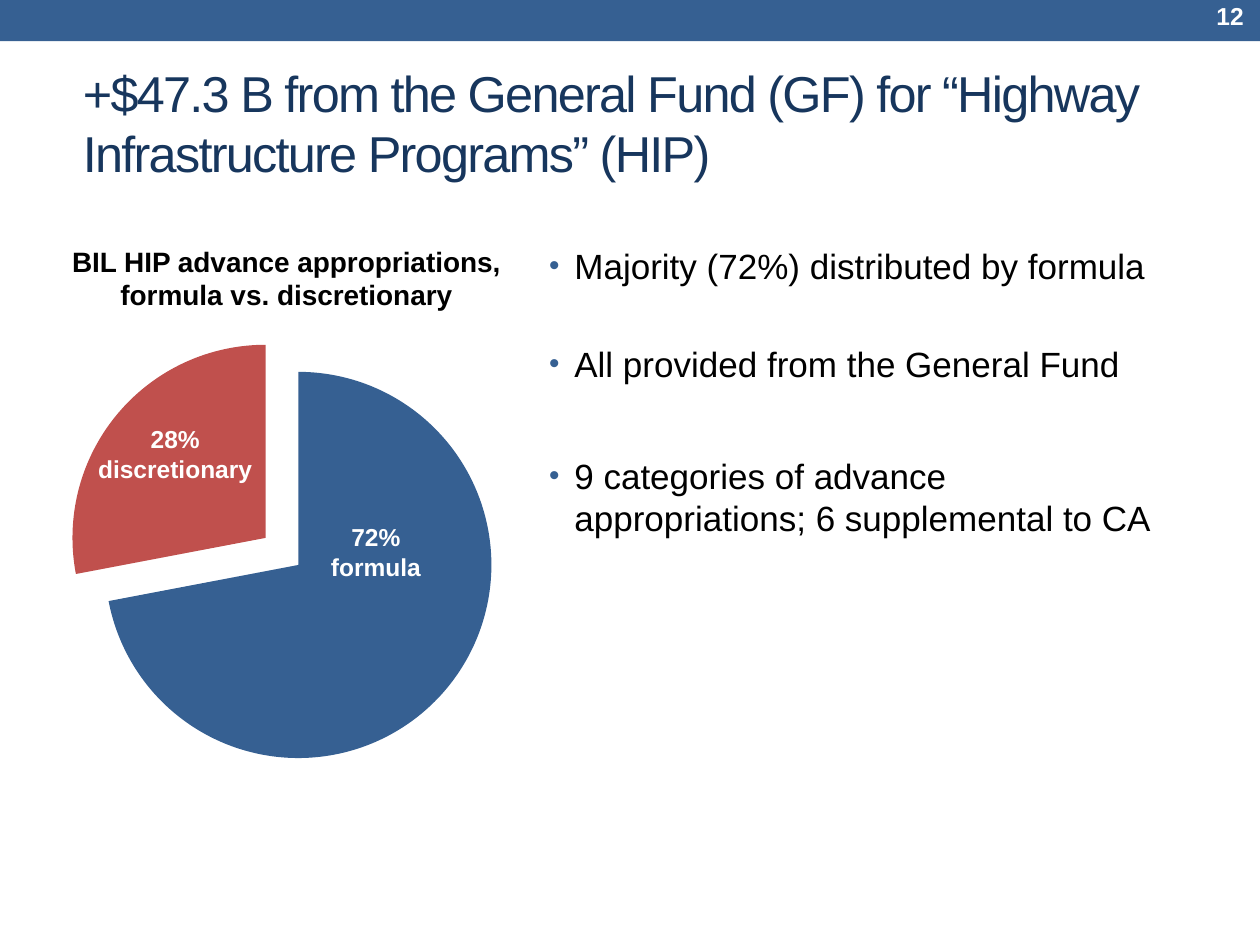
import pptx
import pptx.chart.data
import pptx.dml.color
import pptx.enum.chart
import pptx.enum.shapes
import pptx.enum.text
import pptx.oxml
import pptx.oxml.ns
import pptx.util

Pt = pptx.util.Pt
ALIGN = pptx.enum.text.PP_ALIGN
ANCHOR = pptx.enum.text.MSO_ANCHOR
BLUE, RED, NAVY, BLACK, WHITE = "366092", "C0504D", "17365D", "000000", "FFFFFF"


def color(value):
    """Return the RGB colour for a hex string."""
    return pptx.dml.color.RGBColor.from_string(value)


def apply_format(target, values):
    """Set each attribute of target from a dict."""
    for attribute, value in values.items():
        setattr(target, attribute, value)


def paint(fill, value):
    """Fill solidly with one colour."""
    fill.solid()
    fill.fore_color.rgb = color(value)


def add_text(slide, box, text, size, hue, bold=False, align=ALIGN.LEFT, anchor=ANCHOR.TOP):
    """Write wrapped text in a box and return its text frame."""
    frame = slide.shapes.add_textbox(*map(Pt, box)).text_frame
    apply_format(frame, {"word_wrap": True, "vertical_anchor": anchor, "text": text})
    for paragraph in frame.paragraphs:
        paragraph.alignment = align
        for run in paragraph.runs:
            apply_format(run.font, {"name": "Arial", "size": Pt(size), "bold": bold})
            run.font.color.rgb = color(hue)
    return frame


def add_header(slide, box, number):
    """Draw the top band with the slide number at its right end."""
    left, top, width, height = box
    band = slide.shapes.add_shape(pptx.enum.shapes.MSO_SHAPE.RECTANGLE, *map(Pt, box))
    band.shadow.inherit = False
    paint(band.fill, BLUE)
    band.line.fill.background()
    add_text(slide, (left + width - 86.4, top + 0.7, 84.2, 26), number, 14, WHITE,
             True, ALIGN.RIGHT, ANCHOR.MIDDLE)


def add_title(slide, box, text):
    """Write the slide title with tightened letter spacing."""
    frame = add_text(slide, box, text, 28.8, NAVY, anchor=ANCHOR.MIDDLE)
    for run in frame.paragraphs[0].runs:
        run.font._element.set("spc", "-100")


def add_bullets(slide, box, points):
    """List the points, given as (text, space before), with blue bullets."""
    frame = add_text(slide, box, "\n".join(text for text, _ in points), 20, BLACK)
    namespace = pptx.oxml.ns.nsdecls("a")
    bullet_parts = (
        f'<a:buClr {namespace}><a:srgbClr val="{BLUE}"/></a:buClr>',
        f'<a:buSzPct {namespace} val="85000"/>',
        f'<a:buFont {namespace} typeface="Arial"/>',
        f'<a:buChar {namespace} char="•"/>',
    )
    for paragraph, (_, gap) in zip(frame.paragraphs, points):
        paragraph.space_before = Pt(gap)
        properties = paragraph._p.get_or_add_pPr()
        properties.set("marL", str(Pt(14.4)))
        properties.set("indent", str(-Pt(14.4)))
        for part in bullet_parts:
            properties.append(pptx.oxml.parse_xml(part))


def add_pie(slide, box, shares):
    """Draw the pie of (name, value, colour, explosion) shares."""
    data = pptx.chart.data.CategoryChartData()
    data.categories = [name for name, _, _, _ in shares]
    data.add_series("Share", [value for _, value, _, _ in shares])
    chart = slide.shapes.add_chart(
        pptx.enum.chart.XL_CHART_TYPE.PIE, *map(Pt, box), data).chart
    apply_format(chart, {"has_title": False, "has_legend": False})
    apply_format(chart.font, {"name": "Arial", "size": Pt(10)})
    chart.font.color.rgb = color(BLACK)
    plot = chart.plots[0]
    plot.vary_by_categories = True
    namespace = pptx.oxml.ns.nsdecls("c")
    for index, (_, _, hue, explosion) in enumerate(shares):
        point = plot.series[0].points[index]
        paint(point.format.fill, hue)
        point.format.line.fill.background()
        if explosion:
            slice_xml = plot.series[0]._element.findall(pptx.oxml.ns.qn("c:dPt"))[index]
            slice_xml.find(pptx.oxml.ns.qn("c:spPr")).addprevious(
                pptx.oxml.parse_xml(f'<c:explosion {namespace} val="{explosion}"/>'))
    area = chart._chartSpace.chart.plotArea
    for layout in area.findall(pptx.oxml.ns.qn("c:layout")):
        area.remove(layout)
    settings = {"layoutTarget": "inner", "xMode": "edge", "yMode": "edge",
                "x": 0.13, "y": 0.1, "w": 0.79, "h": 0.79}
    entries = "".join(f'<c:{key} val="{value}"/>' for key, value in settings.items())
    area.insert(0, pptx.oxml.parse_xml(
        f"<c:layout {namespace}><c:manualLayout>{entries}</c:manualLayout></c:layout>"))


def add_share_panel(slide, box):
    """Place the heading, the pie and the two slice labels."""
    left, top, width, _ = box
    add_text(slide, (left + 3.4, top, width - 3.4, 52),
             "BIL HIP advance appropriations, formula vs. discretionary",
             16, BLACK, True, ALIGN.CENTER)
    add_pie(slide, (left, top + 46.8, 279.4, 283),
            [("Formula", 72, BLUE, 0), ("Discretionary", 28, RED, 22)])
    labels = [("28%\ndiscretionary", (16.6, 103, 119.5, 33)),
              ("72%\nformula", (136, 159, 110, 58))]
    for text, (across, down, label_width, label_height) in labels:
        add_text(slide, (left + across, top + down, label_width, label_height),
                 text, 14, WHITE, True, ALIGN.CENTER)


def main():
    """Build the slide and save it."""
    deck = pptx.Presentation()
    apply_format(deck, {"slide_width": Pt(720), "slide_height": Pt(540)})
    slide = deck.slides.add_slide(deck.slide_layouts[6])
    paint(slide.background.fill, WHITE)
    add_header(slide, (0, -5, 720, 28.5), "12")
    add_title(slide, (40.3, 31, 643.7, 77.8),
              "+$47.3 B from the General Fund (GF) for “Highway Infrastructure Programs” (HIP)")
    add_bullets(slide, (306.7, 136, 370, 361.4), [
        ("Majority (72%) distributed by formula", 0),
        ("All provided from the General Fund", 32),
        ("9 categories of advance appropriations; 6 supplemental to CA", 40),
    ])
    add_share_panel(slide, (23.8, 136, 276.4, 330))
    deck.save("out.pptx")


if __name__ == "__main__":
    main()
